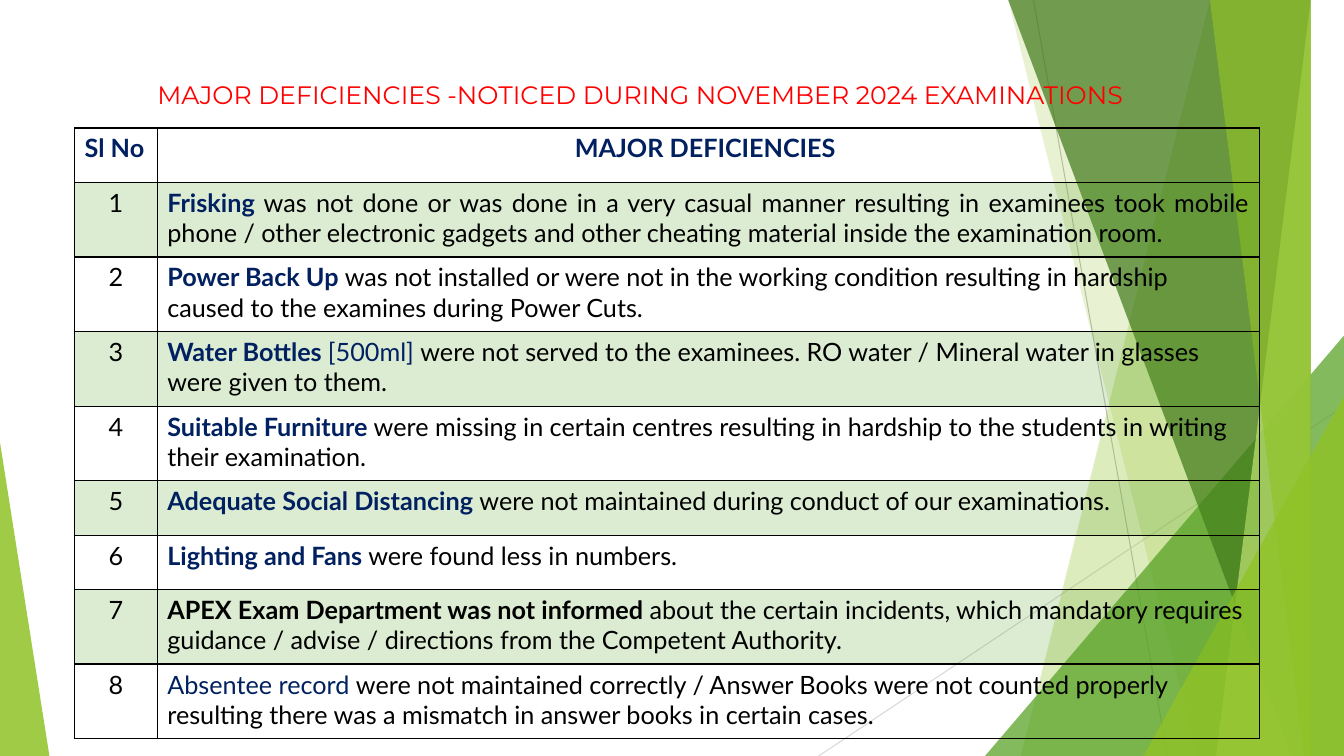
import pptx
import pptx.util
import pptx.dml.color
import pptx.enum.shapes
import pptx.enum.text
import pptx.oxml.ns
import lxml.etree

Inch = pptx.util.Inches
Pt = pptx.util.Pt
Shape = pptx.enum.shapes.MSO_SHAPE
Align = pptx.enum.text.PP_ALIGN
WIDE, HIGH = 13.33, 7.5
GREEN, LEAF, NAVY, BLACK = "90C226", "54A021", "002060", "000000"

HEAD = "MAJOR DEFICIENCIES -NOTICED DURING NOVEMBER 2024 EXAMINATIONS"
ROWS = [
    (0.74, [("Frisking", NAVY, True),
            (" was not done or was done in a very casual manner resulting in examinees took mobile "
             "phone / other electronic gadgets and other cheating material inside the examination room.",
             BLACK, False)]),
    (0.74, [("Power Back Up ", NAVY, True),
            ("was not installed or were not in the working condition resulting in hardship "
             "caused to the examines during Power Cuts.", BLACK, False)]),
    (0.74, [("Water Bottles ", NAVY, True), ("[500ml] ", NAVY, False),
            ("were not served to the examinees. RO water / Mineral water in glasses "
             "were given to them.", BLACK, False)]),
    (0.74, [("Suitable Furniture ", NAVY, True),
            ("were missing in certain centres resulting in hardship to the students in writing "
             "their examination.", BLACK, False)]),
    (0.54, [("Adequate Social Distancing ", NAVY, True),
            ("were not maintained during conduct of our examinations.", BLACK, False)]),
    (0.54, [("Lighting and Fans ", NAVY, True),
            ("were found less in numbers.", BLACK, False)]),
    (0.74, [("APEX Exam Department was not informed ", BLACK, True),
            ("about the certain incidents, which mandatory requires "
             "guidance / advise / directions from the Competent Authority.", BLACK, False)]),
    (0.74, [("Absentee record ", NAVY, False),
            ("were not maintained correctly / Answer Books were not counted properly "
             "resulting there was a mismatch in answer books in certain cases.", BLACK, False)]),
]


def paint(spot, tone, alpha=None):
    if hasattr(spot, "solid"):
        spot.solid()
        spot = spot.fore_color
    spot.rgb = pptx.dml.color.RGBColor.from_string(tone)
    if alpha is not None:
        node = spot._xFill.find(pptx.oxml.ns.qn("a:srgbClr"))
        lxml.etree.SubElement(node, pptx.oxml.ns.qn("a:alpha")).set("val", str(alpha * 1000))


def finish(shape, tone, alpha):
    shape.shadow.inherit = False
    paint(shape.fill, tone, alpha)
    shape.line.fill.background()


def ray(slide, start, end, tone):
    line = slide.shapes.add_connector(
        pptx.enum.shapes.MSO_CONNECTOR.STRAIGHT, *map(Inch, start + end))
    line.line.width = Pt(0.75)
    paint(line.line.fill, tone)
    lxml.etree.SubElement(line._element.spPr, pptx.oxml.ns.qn("a:effectLst"))


def blade(slide, top, foot, tone, alpha):
    pen = slide.shapes.build_freeform(top, 0, scale=float(Inch(1)))
    pen.add_line_segments([(WIDE, 0), (WIDE, HIGH), (foot, HIGH)], close=True)
    finish(pen.convert_to_shape(), tone, alpha)


def wedge(slide, left, width, height, apex, tone, alpha):
    shape = slide.shapes.add_shape(
        Shape.ISOSCELES_TRIANGLE, *map(Inch, (left, HIGH - height, width, height)))
    shape.adjustments[0] = apex
    finish(shape, tone, alpha)


def decor(slide):
    ray(slide, (10.25, 0), (11.58, HIGH), "BFBFBF")
    ray(slide, (WIDE, 4.03), (8.12, HIGH), "D9D9D9")
    blade(slide, 12.28, 10.04, GREEN, 30)
    blade(slide, 10.5, 11.83, GREEN, 20)
    wedge(slide, WIDE - 3.56, 3.56, 4.17, 1, LEAF, 72)
    blade(slide, 10.21, 12.91, "3F7819", 70)
    blade(slide, 13.03, 11.92, "C0E474", 70)
    blade(slide, 11.96, 13.18, GREEN, 65)
    wedge(slide, WIDE - 1.99, 1.99, 3.57, 1, GREEN, 80)
    wedge(slide, 0, 0.49, 3.11, 0, GREEN, 85)


def title(slide, box):
    frame = slide.shapes.add_textbox(*map(Inch, box)).text_frame
    frame.word_wrap = True
    frame.vertical_anchor = pptx.enum.text.MSO_ANCHOR.MIDDLE
    para = frame.paragraphs[0]
    para.text = HEAD
    para.alignment = Align.CENTER
    para.line_spacing = 1.15
    para.space_after = Pt(10)
    para.font.name = "Montserrat"
    para.font.size = Pt(18)
    paint(para.font.fill, "FF0000")


def border(cell):
    props = cell._tc.get_or_add_tcPr()
    for side in ("lnL", "lnR", "lnT", "lnB"):
        edge = lxml.etree.SubElement(props, pptx.oxml.ns.qn("a:" + side), w=str(Pt(1)))
        fill = lxml.etree.SubElement(edge, pptx.oxml.ns.qn("a:solidFill"))
        lxml.etree.SubElement(fill, pptx.oxml.ns.qn("a:srgbClr"), val=BLACK)


def write(cell, parts, align, shade):
    border(cell)
    if shade:
        paint(cell.fill, LEAF, 20)
    else:
        cell.fill.background()
    para = cell.text_frame.paragraphs[0]
    para.alignment = align
    para.font.name = "Lato"
    para.font.size = Pt(18)
    for text, tone, bold in parts:
        run = para.add_run()
        run.text = text
        run.font.bold = bold
        paint(run.font.fill, tone)


def faults(slide, left, top, cols):
    highs = [0.54] + [high for high, parts in ROWS]
    grid = slide.shapes.add_table(
        len(highs), len(cols), *map(Inch, (left, top, sum(cols), sum(highs)))).table
    grid.first_row = grid.horz_banding = False
    for col, width in zip(grid.columns, cols):
        col.width = Inch(width)
    for row, high in zip(grid.rows, highs):
        row.height = Inch(high)
    write(grid.cell(0, 0), [("Sl No", NAVY, True)], Align.LEFT, False)
    write(grid.cell(0, 1), [("MAJOR DEFICIENCIES ", NAVY, True)], Align.CENTER, False)
    for num, (high, parts) in enumerate(ROWS, 1):
        shade = num % 2 == 1
        write(grid.cell(num, 0), [(str(num), BLACK, False)], Align.CENTER, shade)
        write(grid.cell(num, 1), parts, Align.JUSTIFY if num == 1 else Align.LEFT, shade)


def main():
    deck = pptx.Presentation()
    deck.slide_width, deck.slide_height = Inch(WIDE), Inch(HIGH)
    slide = deck.slides.add_slide(deck.slide_layouts[6])
    decor(slide)
    title(slide, (0.74, 0.67, 11.22, 0.48))
    faults(slide, 0.74, 1.27, (0.82, 10.93))
    deck.save("out.pptx")


if __name__ == "__main__":
    main()
